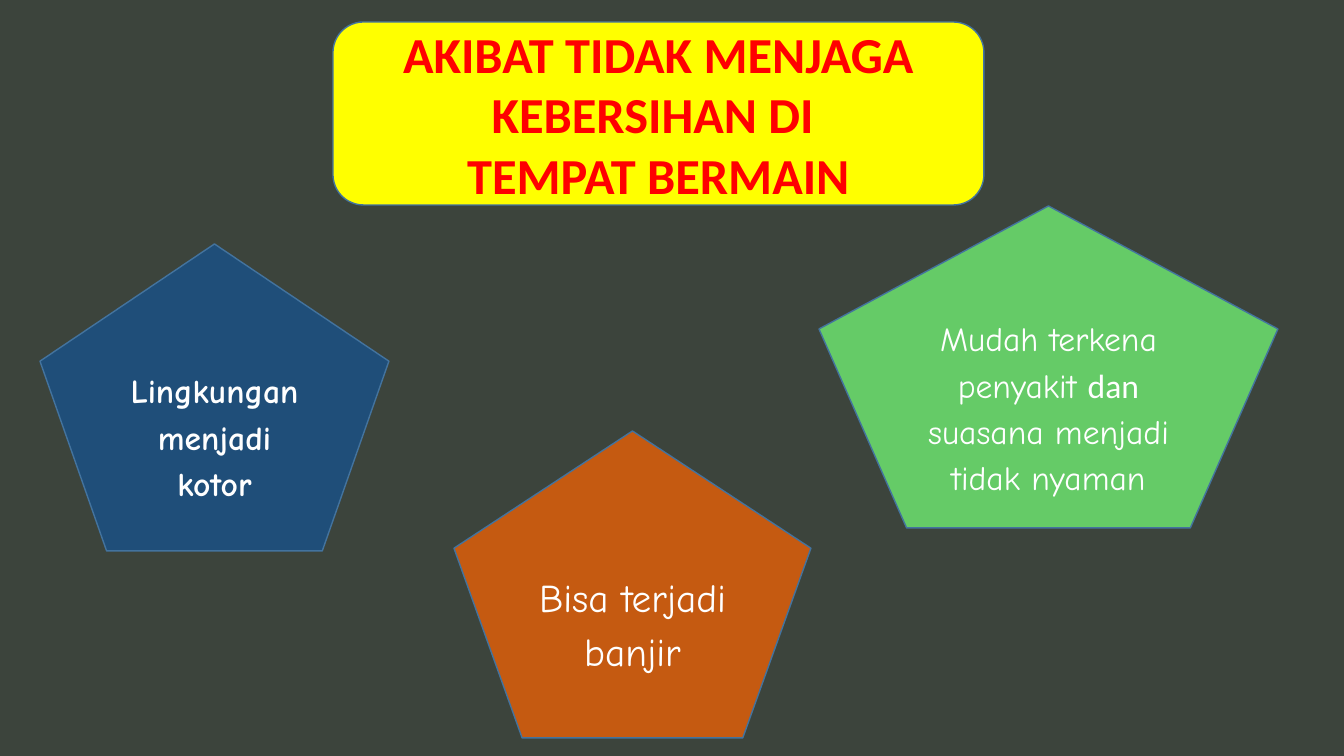
from pptx import Presentation
from pptx.dml.color import RGBColor
from pptx.enum.shapes import MSO_SHAPE
from pptx.enum.text import MSO_ANCHOR, PP_ALIGN
from pptx.util import Emu, Pt

COLORS = {
    "background": "3C443C",
    "outline": "43739E",
    "blue": "1F4E79",
    "orange": "C55A11",
    "green": "65CB67",
    "yellow": "FFFF00",
    "red": "FF0000",
    "white": "FFFFFF",
}
HEADING_FONT = "Calibri"
BODY_FONT = "Comic Neue"
EMU_PER_PX = 914400 / 100.8


def px(length):
    return Emu(round(length * EMU_PER_PX))


def rgb(name):
    return RGBColor.from_string(COLORS[name])


class SlideBuilder:
    def __init__(self, deck):
        self.page = deck.slides.add_slide(deck.slide_layouts[6])
        fill = self.page.background.fill
        fill.solid()
        fill.fore_color.rgb = rgb("background")

    def shape(self, kind, bounds, color):
        box = self.page.shapes.add_shape(kind, *map(px, bounds))
        box.shadow.inherit = False
        box.fill.solid()
        box.fill.fore_color.rgb = rgb(color)
        box.line.color.rgb = rgb("outline")
        box.line.width = Pt(1)
        box.text_frame.word_wrap = True
        box.text_frame.vertical_anchor = MSO_ANCHOR.MIDDLE
        return box

    def style(self, para, size, color, bold, font):
        para.alignment = PP_ALIGN.CENTER
        para.font.size = Pt(size)
        para.font.bold = bold
        para.font.color.rgb = rgb(color)
        para.font.name = font

    def title(self, bounds, lines):
        box = self.shape(MSO_SHAPE.FLOWCHART_ALTERNATE_PROCESS, bounds, "yellow")
        frame = box.text_frame
        for index, line in enumerate(lines):
            para = frame.add_paragraph() if index else frame.paragraphs[0]
            para.add_run().text = line
            self.style(para, 36, "red", True, HEADING_FONT)

    def pentagon(self, bounds, color, spans, size=24, bold=False):
        box = self.shape(MSO_SHAPE.REGULAR_PENTAGON, bounds, color)
        para = box.text_frame.paragraphs[0]
        self.style(para, size, "white", bold, BODY_FONT)
        para.line_spacing = 1.15
        for text, font in spans:
            span = para.add_run()
            span.text = text
            if font != BODY_FONT:
                span.font.name = font


def main():
    deck = Presentation()
    deck.slide_width, deck.slide_height = px(1344), px(756)
    slide = SlideBuilder(deck)
    slide.pentagon((40, 244, 349, 307), "blue",
                   [("Lingkungan menjadi kotor", BODY_FONT)], bold=True)
    slide.pentagon((454, 431, 357, 307), "orange",
                   [("Bisa terjadi banjir", BODY_FONT)], size=28)
    slide.pentagon((819, 206, 459, 322), "green",
                   [("Mudah terkena penyakit ", BODY_FONT),
                    ("dan ", HEADING_FONT),
                    ("suasana menjadi tidak nyaman", BODY_FONT)])
    slide.title((333, 22, 651, 183),
                ["AKIBAT TIDAK MENJAGA KEBERSIHAN DI ", "TEMPAT BERMAIN"])
    deck.save("out.pptx")


if __name__ == "__main__":
    main()
